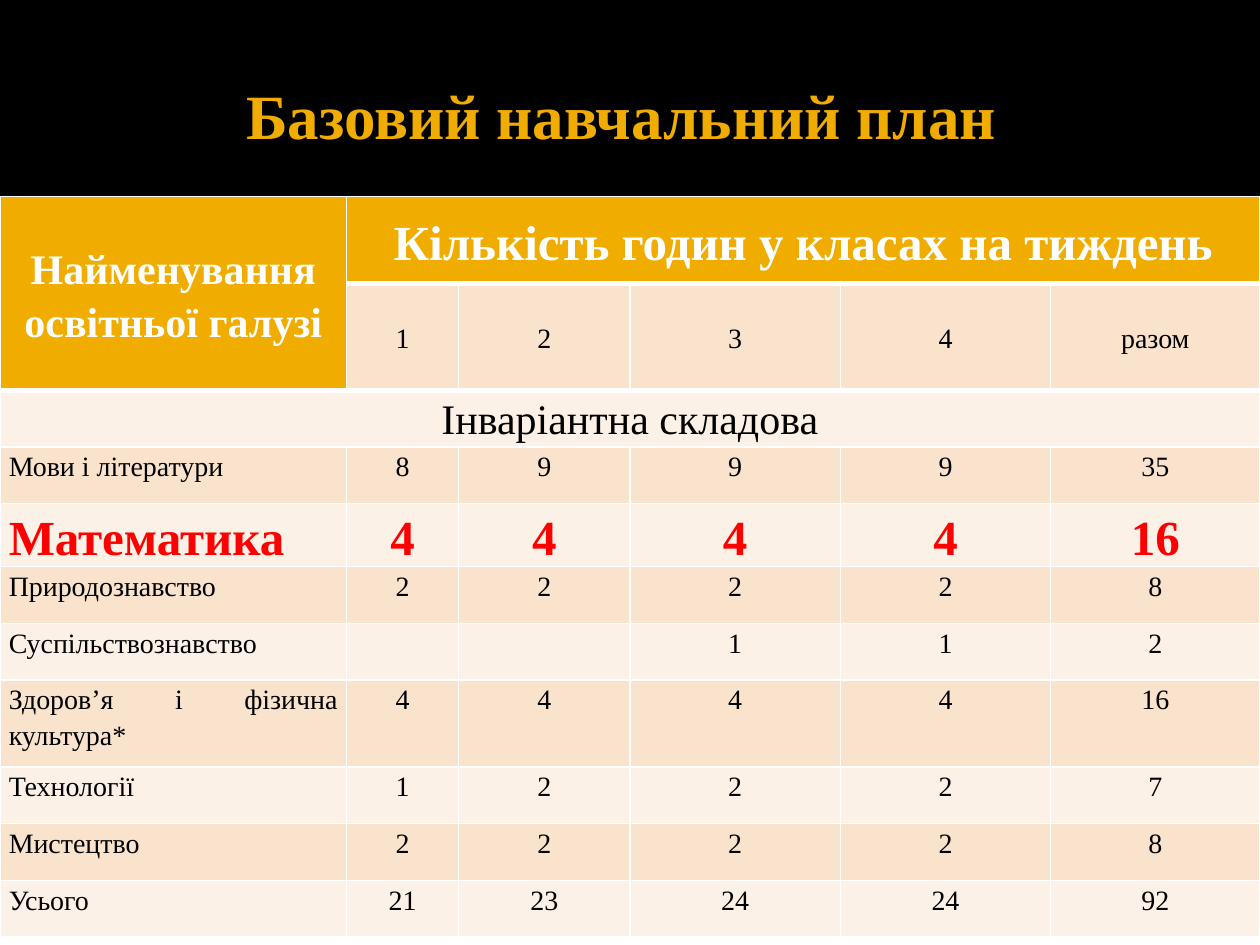
import pptx
import pptx.util
import pptx.dml.color
import pptx.enum.shapes
import pptx.enum.text
import pptx.oxml.ns
from dataclasses import dataclass
from lxml import etree

Inches = pptx.util.Inches
Pt = pptx.util.Pt
Align = pptx.enum.text.PP_ALIGN
Anchor = pptx.enum.text.MSO_ANCHOR
qn = pptx.oxml.ns.qn


@dataclass(frozen=True)
class Theme:
    font: str = "Times New Roman"
    black: str = "000000"
    white: str = "FFFFFF"
    gold: str = "F0AD00"
    red: str = "FF0000"
    dark: str = "F9E3CC"
    light: str = "FCF1E7"
    title: int = 36
    large: int = 28
    mid: int = 24
    small: int = 16


theme = Theme()


def style(para, size, color, bold, align):
    para.alignment = align
    para.font.name = theme.font
    para.font.size = Pt(size)
    para.font.bold = bold
    para.font.color.rgb = pptx.dml.color.RGBColor.from_string(color)


def paint(cell, color, base):
    props = cell._tc.get_or_add_tcPr()
    for side in ("lnL", "lnR", "lnT", "lnB"):
        width = base if side == "lnB" else 1
        line = etree.SubElement(props, qn("a:" + side), w=str(Pt(width)))
        fill = etree.SubElement(line, qn("a:solidFill"))
        etree.SubElement(fill, qn("a:srgbClr"), val=theme.white)
    cell.fill.solid()
    cell.fill.fore_color.rgb = pptx.dml.color.RGBColor.from_string(color)


deck = pptx.Presentation()
deck.slide_width = Inches(10)
deck.slide_height = Inches(7.5)
slide = deck.slides.add_slide(deck.slide_layouts[5])
shapes = slide.shapes

for top, height, color in ((1.57, 0.05, theme.white), (0, 1.57, theme.black)):
    band = shapes.add_shape(
        pptx.enum.shapes.MSO_SHAPE.RECTANGLE,
        Inches(0), Inches(top), Inches(10), Inches(height))
    band.shadow.inherit = False
    band.fill.solid()
    band.fill.fore_color.rgb = pptx.dml.color.RGBColor.from_string(color)
    band.line.fill.background()

title = shapes.title
shapes._spTree.append(title._element)
title.left, title.top = Inches(0.37), Inches(0.41)
title.width, title.height = Inches(9.07), Inches(0.99)
frame = title.text_frame
frame.text = "Базовий навчальний план"
frame.vertical_anchor = Anchor.MIDDLE
frame.margin_left = Inches(0.1)
frame.margin_right = frame.margin_top = frame.margin_bottom = Inches(0.05)
style(frame.paragraphs[0], theme.title, theme.gold, True, Align.CENTER)

rows = [
    ["Найменування освітньої галузі", "Кількість годин у класах на тиждень"],
    ["", "1", "2", "3", "4", "разом"],
    ["Інваріантна складова"],
    ["Мови і літератури", "8", "9", "9", "9", "35"],
    ["Математика", "4", "4", "4", "4", "16"],
    ["Природознавство", "2", "2", "2", "2", "8"],
    ["Суспільствознавство", "", "", "1", "1", "2"],
    ["Здоров’я і фізична культура*", "4", "4", "4", "4", "16"],
    ["Технології", "1", "2", "2", "2", "7"],
    ["Мистецтво", "2", "2", "2", "2", "8"],
    ["Усього", "21", "23", "24", "24", "92"],
]
widths = [2.75, 0.89, 1.36, 1.67, 1.67, 1.66]
heights = [0.69, 0.84] + [0.45] * 9
heights[4] = 0.5
heights[7] = 0.69

grid = shapes.add_table(
    len(rows), len(widths), Inches(0), Inches(1.56),
    Inches(sum(widths)), Inches(sum(heights))).table
for col, width in zip(grid.columns, widths):
    col.width = Inches(width)
for row, height in zip(grid.rows, heights):
    row.height = Inches(height)

grid.cell(0, 0).merge(grid.cell(1, 0))
grid.cell(0, 1).merge(grid.cell(0, 5))
grid.cell(2, 0).merge(grid.cell(2, 5))

for r, row in enumerate(rows):
    for c in range(len(widths)):
        cell = grid.cell(r, c)
        head = r == 0 or (r == 1 and c == 0)
        math = r == 4
        shade = theme.gold if head else theme.dark if r % 2 else theme.light
        paint(cell, shade, 3 if r < 2 else 1)
        cell.margin_left = cell.margin_right = Inches(0.07)
        cell.margin_top = cell.margin_bottom = 0
        cell.vertical_anchor = Anchor.MIDDLE if r < 2 else Anchor.TOP
        if c < len(row):
            cell.text = row[c]
        size = theme.small
        if math or (r == 0 and c):
            size = theme.large
        elif head or r == 2:
            size = theme.mid
        ink = theme.white if head else theme.red if math else theme.black
        align = Align.JUSTIFY if c == 0 and r > 2 else Align.CENTER
        para = cell.text_frame.paragraphs[0]
        style(para, size, ink, head or math, align)
        para.line_spacing = 1.15
        para.space_before = Pt(12 if r == 2 else 6)
        para.space_after = Pt(6 if r < 3 else 0)

deck.save("out.pptx")
